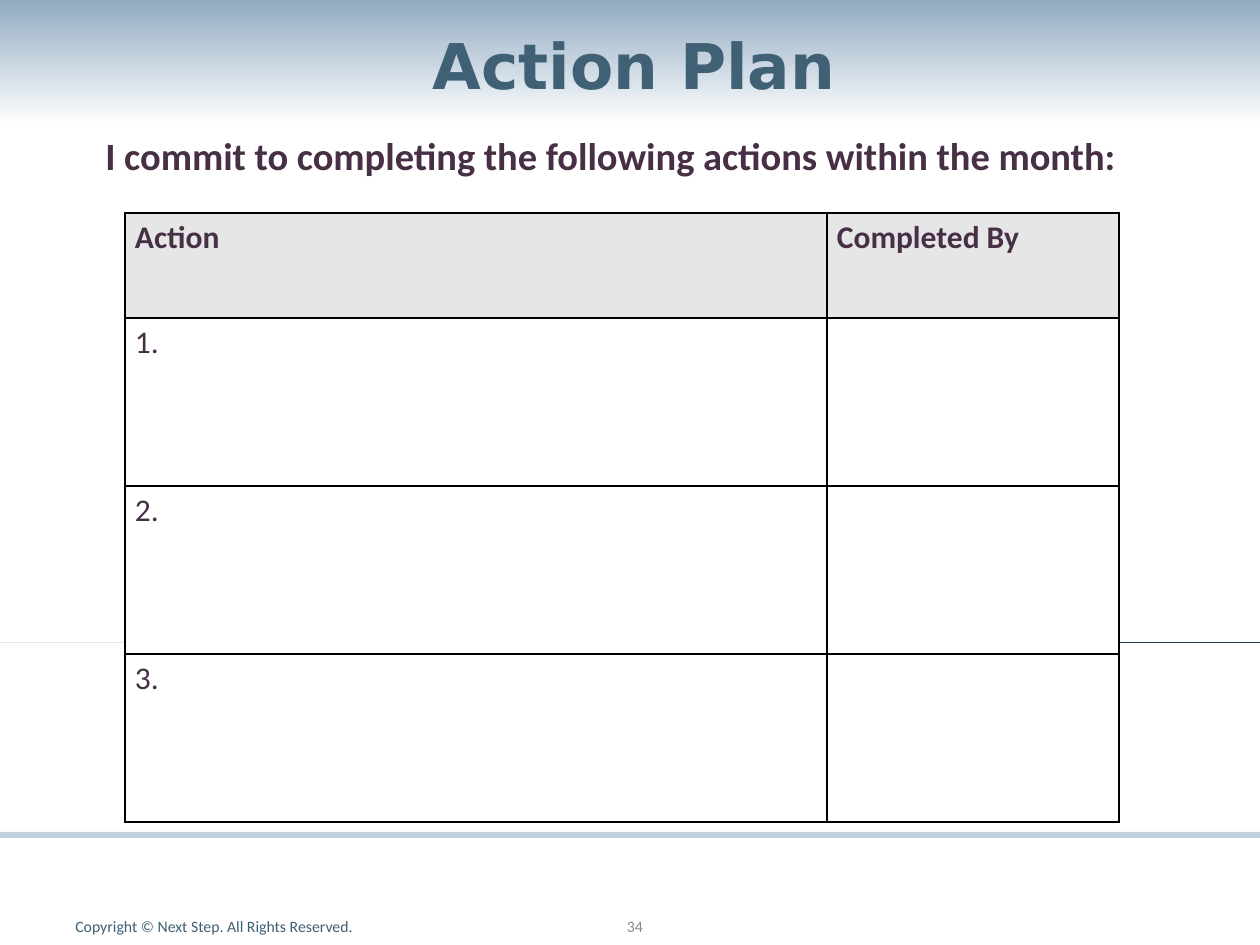
import pptx
import pptx.dml.color
import pptx.enum.shapes
import pptx.enum.text
import pptx.util
from lxml import etree

EMU_PER_PX = 914400 / 126
SLIDE_SIZE = (1260, 945)
COLORS = {
    "white": "FFFFFF", "black": "000000", "sky": "91ABC2", "rule": "C1D1DE",
    "hairline": "1C3F56", "title": "3F6075", "plum": "472F46",
    "header": "E6E6E6", "number": "898989",
}
ALIGN = pptx.enum.text.PP_ALIGN
ANCHOR = pptx.enum.text.MSO_ANCHOR
SHAPE = pptx.enum.shapes.MSO_SHAPE


def px(length):
    return pptx.util.Emu(round(length * EMU_PER_PX))


def rgb(name):
    return pptx.dml.color.RGBColor.from_string(COLORS[name])


def add_run(paragraph, text, size, color, bold=False, font="Calibri"):
    run = paragraph.add_run()
    run.text = text
    run.font.size = pptx.util.Pt(size)
    run.font.name = font
    run.font.bold = bold
    run.font.color.rgb = rgb(color)


def add_block(slide, preset, box, color):
    block = slide.shapes.add_shape(preset, *map(px, box))
    block.shadow.inherit = False
    block.line.fill.background()
    block.fill.solid()
    block.fill.fore_color.rgb = rgb(color)
    return block


def add_label(slide, box, text, size, color, bold=False,
              align=ALIGN.LEFT, anchor=ANCHOR.TOP):
    frame = slide.shapes.add_textbox(*map(px, box)).text_frame
    frame.word_wrap = True
    frame.vertical_anchor = anchor
    paragraph = frame.paragraphs[0]
    paragraph.alignment = align
    add_run(paragraph, text, size, color, bold)


def add_backdrop(slide, width):
    """Hairline, gradient band at the top and rule above the footer."""
    hairline = add_block(slide, SHAPE.RIGHT_TRIANGLE, (0, 642, width, 1), "hairline")
    hairline.rotation = 180
    band = add_block(slide, SHAPE.RECTANGLE, (0, 0, width, 125), "white")
    band.fill.gradient()
    band.fill.gradient_angle = 90
    for stop, color in zip(band.fill.gradient_stops, ("white", "sky")):
        stop.color.rgb = rgb(color)
    add_block(slide, SHAPE.RECTANGLE, (0, 832, width, 6), "rule")


def add_footer(slide, top, height):
    add_label(slide, (63, top, 415, height),
              "Copyright ©\u00a0Next Step. All Rights Reserved.", 9, "title",
              anchor=ANCHOR.MIDDLE)
    add_label(slide, (572, top, 126, height), "34", 9, "number",
              align=ALIGN.CENTER, anchor=ANCHOR.MIDDLE)


def set_title(slide, box, text):
    title = slide.shapes.title
    title.left, title.top, title.width, title.height = map(px, box)
    frame = title.text_frame
    frame.vertical_anchor = ANCHOR.TOP
    frame.auto_size = pptx.enum.text.MSO_AUTO_SIZE.NONE
    paragraph = frame.paragraphs[0]
    paragraph.alignment = ALIGN.CENTER
    add_run(paragraph, text, 36, "title", True, "DejaVu Sans")


def add_borders(cell):
    properties = cell._tc.get_or_add_tcPr()
    for position, side in enumerate(("lnL", "lnR", "lnT", "lnB")):
        line = etree.Element(pptx.oxml.ns.qn(f"a:{side}"), w="12700")
        fill = etree.SubElement(line, pptx.oxml.ns.qn("a:solidFill"))
        etree.SubElement(fill, pptx.oxml.ns.qn("a:srgbClr"), val=COLORS["black"])
        properties.insert(position, line)


def add_action_table(slide, left, top):
    rows = [("Action", "Completed By"), ("1.", ""), ("2.", ""), ("3.", "")]
    widths = (702, 292)
    heights = (105, 168, 168, 168)
    table = slide.shapes.add_table(
        len(rows), len(widths),
        *map(px, (left, top, sum(widths), sum(heights)))).table
    for column, width in zip(table.columns, widths):
        column.width = px(width)
    for r, (texts, height) in enumerate(zip(rows, heights)):
        table.rows[r].height = px(height)
        for c, text in enumerate(texts):
            cell = table.cell(r, c)
            cell.margin_left = cell.margin_right = px(10)
            cell.margin_top = cell.margin_bottom = 0
            cell.fill.solid()
            cell.fill.fore_color.rgb = rgb("white" if r else "header")
            add_borders(cell)
            if text:
                paragraph = cell.text_frame.paragraphs[0]
                paragraph.line_spacing = 1.15
                paragraph.space_after = pptx.util.Pt(10)
                add_run(paragraph, text, 18, "plum", bold=r == 0)


def main():
    presentation = pptx.Presentation()
    presentation.slide_width, presentation.slide_height = map(px, SLIDE_SIZE)
    slide = presentation.slides.add_slide(presentation.slide_layouts[5])
    add_backdrop(slide, SLIDE_SIZE[0])
    add_footer(slide, 908, 36)
    add_action_table(slide, 125, 213)
    add_label(slide, (93, 126, 1046, 59),
              "I commit to completing the following actions within the month:",
              22, "plum", True)
    set_title(slide, (67, 20, 1134, 129), "Action Plan")
    # The title placeholder comes first by default; bring it above the band.
    slide.shapes._spTree.append(slide.shapes.title._element)
    presentation.save("out.pptx")


if __name__ == "__main__":
    main()
